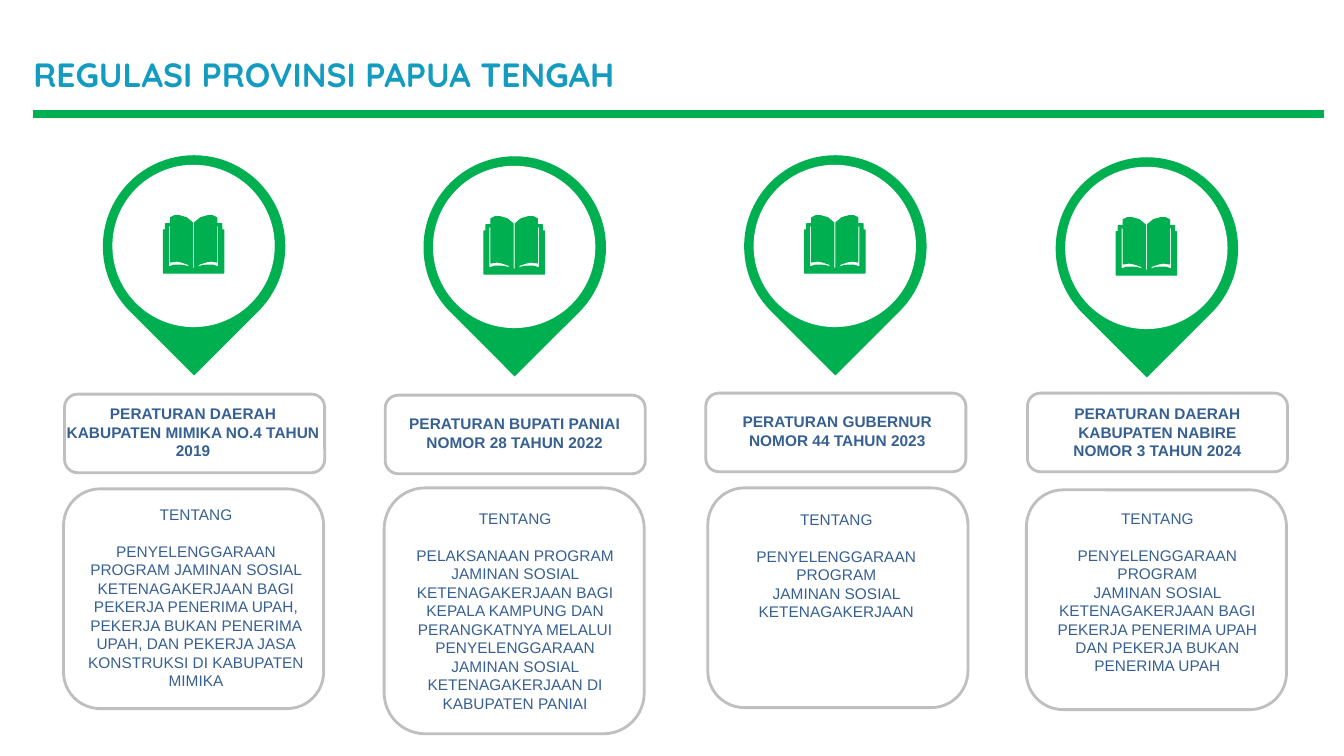
from dataclasses import dataclass
from typing import Any, NamedTuple

from lxml import etree
from pptx import Presentation
from pptx import util as u
from pptx.dml import color
from pptx.enum import shapes, text
from pptx.oxml import ns

COLS, ROWS = 133.3, 75
CELL = u.Inches(0.1)
GREEN, GREY, WHITE, NAVY, TEAL = "00B050", "BFBFBF", "FFFFFF", "376092", "149BC0"
PIN, DISC, DISC_INSET, BOOK_INSET = 18.1, 16, 1, 6
BOOK_WIDTH = 60
BOOK_HALF = [
    (31, 52), (37, 50), (43, 49), (49, 49), (55, 51), (55, 10), (53, 10),
    (53, 46), (47, 45), (42, 45.5), (36, 48), (31, 52), (31, 7), (37, 2),
    (44, 0), (49, 0.5), (53, 2), (53, 8), (58, 8), (58, 14), (60, 14), (60, 57),
]


class Box(NamedTuple):
    x: float
    y: float
    w: float
    h: float


class Insets(NamedTuple):
    left: float
    top: float
    right: float
    bottom: float


ROOMY = Insets(1, 0.5, 1, 0.5)
TIGHT = Insets(0, 0.1, 0, 0)


@dataclass
class Regulation:
    pin: tuple[float, float]
    name_card: Box
    name_text: Box
    name: list[str]
    topic_card: Box
    topic_text: Box
    topic: list[str]
    insets: Insets = ROOMY


REGULATIONS = [
    Regulation(
        (10.2, 15.4),
        Box(6.4, 39.1, 25.8, 7.8), Box(6.4, 40, 25.5, 7.8),
        ["PERATURAN DAERAH KABUPATEN MIMIKA NO.4 TAHUN 2019"],
        Box(6.3, 48.5, 25.8, 21.8), Box(7.6, 50, 23.7, 19.4),
        ["PENYELENGGARAAN PROGRAM JAMINAN SOSIAL KETENAGAKERJAAN BAGI "
         "PEKERJA PENERIMA UPAH, PEKERJA BUKAN PENERIMA UPAH, DAN PEKERJA "
         "JASA KONSTRUKSI DI KABUPATEN MIMIKA"],
        TIGHT,
    ),
    Regulation(
        (42, 15.5),
        Box(38.2, 39.2, 25.8, 7.8), Box(38.3, 40.6, 25.5, 4.7),
        ["PERATURAN BUPATI PANIAI", "NOMOR 28 TAHUN 2022"],
        Box(38.1, 48.4, 25.8, 24.4), Box(39.4, 50, 23.4, 21.8),
        ["PELAKSANAAN PROGRAM JAMINAN SOSIAL KETENAGAKERJAAN BAGI KEPALA "
         "KAMPUNG DAN PERANGKATNYA MELALUI PENYELENGGARAAN JAMINAN SOSIAL "
         "KETENAGAKERJAAN DI KABUPATEN PANIAI"],
    ),
    Regulation(
        (73.8, 15.4),
        Box(70, 39, 25.8, 7.8), Box(69.4, 40.4, 27.3, 4.7),
        ["PERATURAN GUBERNUR", "NOMOR 44 TAHUN 2023"],
        Box(70.2, 48.4, 25.8, 21.8), Box(70.2, 50.1, 25.5, 12.1),
        ["PENYELENGGARAAN", "PROGRAM", "JAMINAN SOSIAL KETENAGAKERJAAN"],
    ),
    Regulation(
        (104.7, 15.6),
        Box(101.9, 39, 25.8, 7.8), Box(103.1, 39.6, 23.4, 6.5),
        ["PERATURAN DAERAH KABUPATEN NABIRE", "NOMOR 3 TAHUN 2024"],
        Box(101.8, 48.6, 25.8, 21.8), Box(103.1, 50, 23.4, 17.6),
        ["PENYELENGGARAAN PROGRAM",
         "JAMINAN SOSIAL KETENAGAKERJAAN BAGI PEKERJA PENERIMA UPAH DAN "
         "PEKERJA BUKAN PENERIMA UPAH"],
    ),
]


def grid(cells: float) -> int:
    return round(cells * CELL)


def rgb(value: str) -> color.RGBColor:
    return color.RGBColor.from_string(value)


def apply(target: Any, values: dict[str, Any]) -> None:
    for key, value in values.items():
        setattr(target, key, value)


def paint(sp: Any, fill: str, line: str | None = None, width: float = 0.75) -> None:
    sp.shadow.inherit = False
    sp.fill.solid()
    sp.fill.fore_color.rgb = rgb(fill)
    if line is None:
        sp.line.fill.background()
    else:
        sp.line.color.rgb = rgb(line)
        sp.line.width = u.Pt(width)


def add_preset(parent: Any, kind: Any, box: Box) -> Any:
    return parent.add_shape(kind, *map(grid, box))


def write(sp: Any, lines: list[str], insets: Insets, align: Any,
          font: dict[str, Any], tint: str) -> Any:
    tf = sp.text_frame
    apply(tf, {
        "word_wrap": True,
        "auto_size": text.MSO_AUTO_SIZE.NONE,
        "vertical_anchor": text.MSO_ANCHOR.TOP,
        "margin_left": grid(insets.left),
        "margin_top": grid(insets.top),
        "margin_right": grid(insets.right),
        "margin_bottom": grid(insets.bottom),
    })
    for i, line in enumerate(lines):
        p = tf.paragraphs[0] if i == 0 else tf.add_paragraph()
        p.alignment = align
        r = p.add_run()
        r.text = line
        apply(r.font, font)
        r.font.color.rgb = rgb(tint)
    return tf


def add_label(s: Any, box: Box, lines: list[str], insets: Insets, bold: bool) -> Any:
    font = {"name": "Arial", "size": u.Pt(11), "bold": bold}
    sp = s.shapes.add_textbox(*map(grid, box))
    return write(sp, lines, insets, text.PP_ALIGN.CENTER, font, NAVY)


def add_card(s: Any, box: Box) -> None:
    kind = shapes.MSO_SHAPE.FLOWCHART_ALTERNATE_PROCESS
    paint(add_preset(s.shapes, kind, box), WHITE, GREY, 2)


def add_pin(s: Any, x: float, y: float) -> None:
    parts = s.shapes.add_group_shape().shapes
    drop = add_preset(parts, shapes.MSO_SHAPE.TEAR, Box(x, y, PIN, PIN))
    drop.adjustments[0] = 1
    drop.rotation = 135
    paint(drop, GREEN)
    disc = Box(x + DISC_INSET, y + DISC_INSET, DISC, DISC)
    paint(add_preset(parts, shapes.MSO_SHAPE.OVAL, disc), WHITE, WHITE)
    outline = BOOK_HALF + [(BOOK_WIDTH - px, py) for px, py in reversed(BOOK_HALF)]
    builder = parts.build_freeform(*outline[0], scale=CELL / 10)
    builder.add_line_segments(outline[1:], close=True)
    book = builder.convert_to_shape(grid(x + BOOK_INSET), grid(y + BOOK_INSET))
    paint(book, GREEN, GREEN)


def add_heading(s: Any) -> None:
    sp = s.shapes.title
    box = Box(3.3, 5.2, 97.8, 4.2)
    apply(sp, dict(zip(("left", "top", "width", "height"), map(grid, box))))
    font = {"name": "Quicksand", "size": u.Pt(24), "bold": True}
    write(sp, ["REGULASI PROVINSI PAPUA TENGAH"], TIGHT, text.PP_ALIGN.LEFT, font, TEAL)
    ends = map(grid, (3.3, 11.3, 131.3, 11.3))
    rule = s.shapes.add_connector(shapes.MSO_CONNECTOR.STRAIGHT, *ends)
    rule.line.color.rgb = rgb(GREEN)
    rule.line.width = u.Pt(6)
    etree.SubElement(rule._element.spPr, ns.qn("a:effectLst"))


def add_regulation(s: Any, item: Regulation) -> None:
    add_pin(s, *item.pin)
    add_card(s, item.name_card)
    add_label(s, item.name_text, item.name, item.insets, True)
    add_card(s, item.topic_card)
    tf = add_label(s, item.topic_text, ["TENTANG", *item.topic], item.insets, False)
    tf.paragraphs[0].space_after = u.Pt(13)


def main() -> None:
    prs = Presentation()
    apply(prs, {"slide_width": grid(COLS), "slide_height": grid(ROWS)})
    s = prs.slides.add_slide(prs.slide_layouts[5])
    add_heading(s)
    for item in REGULATIONS:
        add_regulation(s, item)
    prs.save("out.pptx")


if __name__ == "__main__":
    main()
